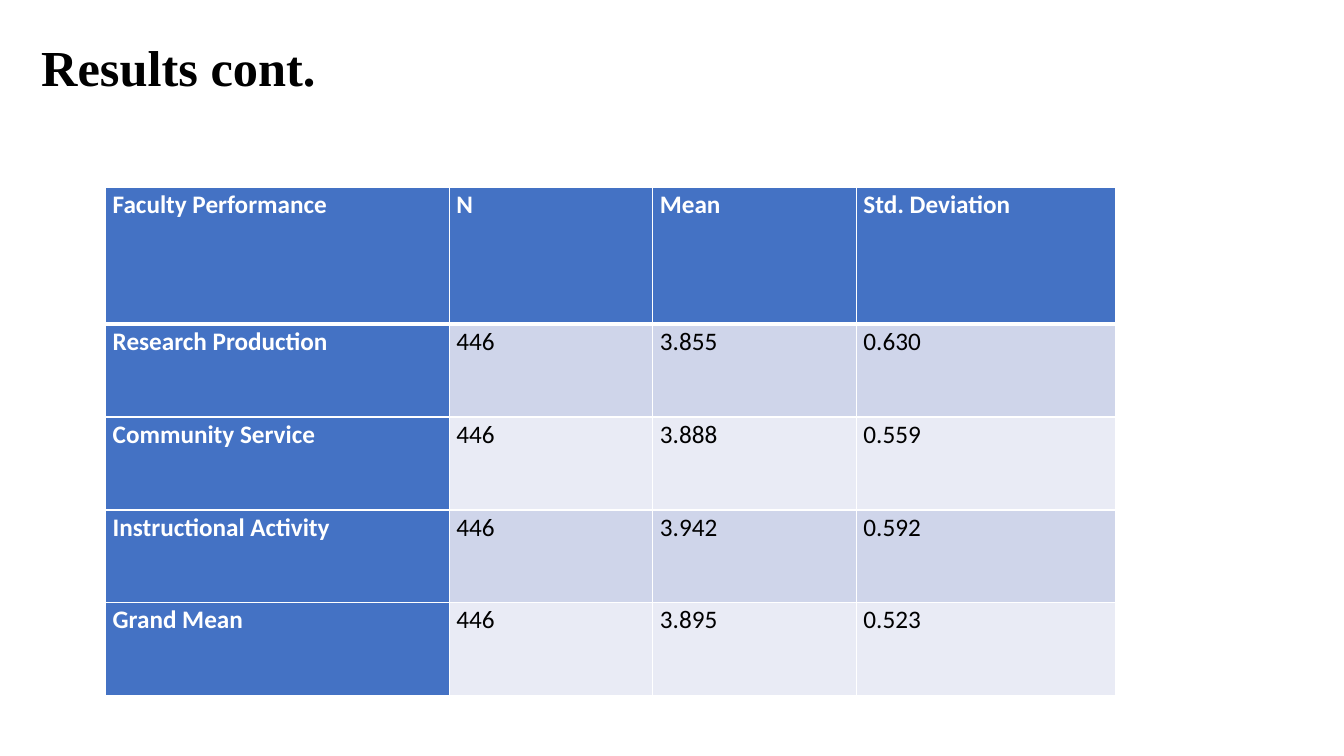
from dataclasses import dataclass

from lxml.etree import SubElement
from pptx import Presentation
from pptx.dml.color import RGBColor as RGB
from pptx.enum.text import MSO_ANCHOR as Anchor
from pptx.oxml.ns import qn
from pptx.slide import Slide
from pptx.table import _Cell as Cell
from pptx.text.text import TextFrame
from pptx.util import Cm, Pt


@dataclass(frozen=True)
class Theme:
    title_font: str = "Times New Roman"
    body_font: str = "Calibri"
    title_size: int = 36
    body_size: int = 18
    black: str = "000000"
    white: str = "FFFFFF"
    accent: str = "4472C4"
    bands: tuple[str, str] = ("CFD5EA", "E9EBF5")
    line: int = 1
    header_line: int = 3


@dataclass(frozen=True)
class Measure:
    name: str
    n: str
    mean: str
    deviation: str

    def texts(self) -> tuple[str, ...]:
        return self.name, self.n, self.mean, self.deviation


THEME = Theme()
HEADER = Measure("Faculty Performance", "N", "Mean", "Std. Deviation")
MEASURES = [
    Measure("Research Production", "446", "3.855", "0.630"),
    Measure("Community Service", "446", "3.888", "0.559"),
    Measure("Instructional Activity", "446", "3.942", "0.592"),
    Measure("Grand Mean", "446", "3.895", "0.523"),
]
COLUMN_WIDTHS = [Cm(8.66), Cm(5.13), Cm(5.13), Cm(6.53)]
HEADER_HEIGHT, ROW_HEIGHT = Cm(3.45), Cm(2.34)


def write(tf: TextFrame, text: str, *, font: str, size: int, color: str,
          bold: bool, spacing: float) -> None:
    p = tf.paragraphs[0]
    p.line_spacing = spacing
    r = p.add_run()
    r.text = text
    r.font.name, r.font.size, r.font.bold = font, Pt(size), bold
    r.font.color.rgb = RGB.from_string(color)


def add_borders(cell: Cell, top: int, bottom: int) -> None:
    """Draw white cell borders; call before filling, as lines precede the fill."""
    tc_pr = cell._tc.get_or_add_tcPr()
    widths = {"a:lnL": THEME.line, "a:lnR": THEME.line, "a:lnT": top, "a:lnB": bottom}
    for tag, width in widths.items():
        ln = SubElement(tc_pr, qn(tag), w=str(Pt(width)))
        fill = SubElement(ln, qn("a:solidFill"))
        SubElement(fill, qn("a:srgbClr"), val=THEME.white)


def add_title(s: Slide, text: str) -> None:
    sp = s.shapes.add_textbox(Cm(0.79), Cm(-0.08), Cm(29.21), Cm(3.68))
    tf = sp.text_frame
    tf.word_wrap = True
    tf.vertical_anchor = Anchor.MIDDLE
    write(tf, text, font=THEME.title_font, size=THEME.title_size,
          color=THEME.black, bold=True, spacing=0.9)


def add_results(s: Slide, measures: list[Measure]) -> None:
    rows = [HEADER, *measures]
    heights = [HEADER_HEIGHT] + [ROW_HEIGHT] * len(measures)
    table = s.shapes.add_table(len(rows), len(COLUMN_WIDTHS), Cm(2.66), Cm(4.72),
                               sum(COLUMN_WIDTHS), sum(heights)).table
    table.first_col = True
    for column, width in zip(table.columns, COLUMN_WIDTHS):
        column.width = width
    for i, (row, height) in enumerate(zip(rows, heights)):
        table.rows[i].height = height
        for j, text in enumerate(row.texts()):
            cell = table.cell(i, j)
            heading = i == 0 or j == 0
            cell.margin_left = cell.margin_right = Cm(0.18)
            cell.margin_top = cell.margin_bottom = 0
            add_borders(cell, top=THEME.header_line if i == 1 else THEME.line,
                        bottom=THEME.header_line if i == 0 else THEME.line)
            cell.fill.solid()
            fill = THEME.accent if heading else THEME.bands[(i - 1) % 2]
            cell.fill.fore_color.rgb = RGB.from_string(fill)
            write(cell.text_frame, text, font=THEME.body_font, size=THEME.body_size,
                  color=THEME.white if heading else THEME.black,
                  bold=heading, spacing=1.07)


def main() -> None:
    prs = Presentation()
    prs.slide_width, prs.slide_height = Cm(33.87), Cm(19.05)
    s = prs.slides.add_slide(prs.slide_layouts[6])
    add_title(s, "Results cont.")
    add_results(s, MEASURES)
    prs.save("out.pptx")


if __name__ == "__main__":
    main()
